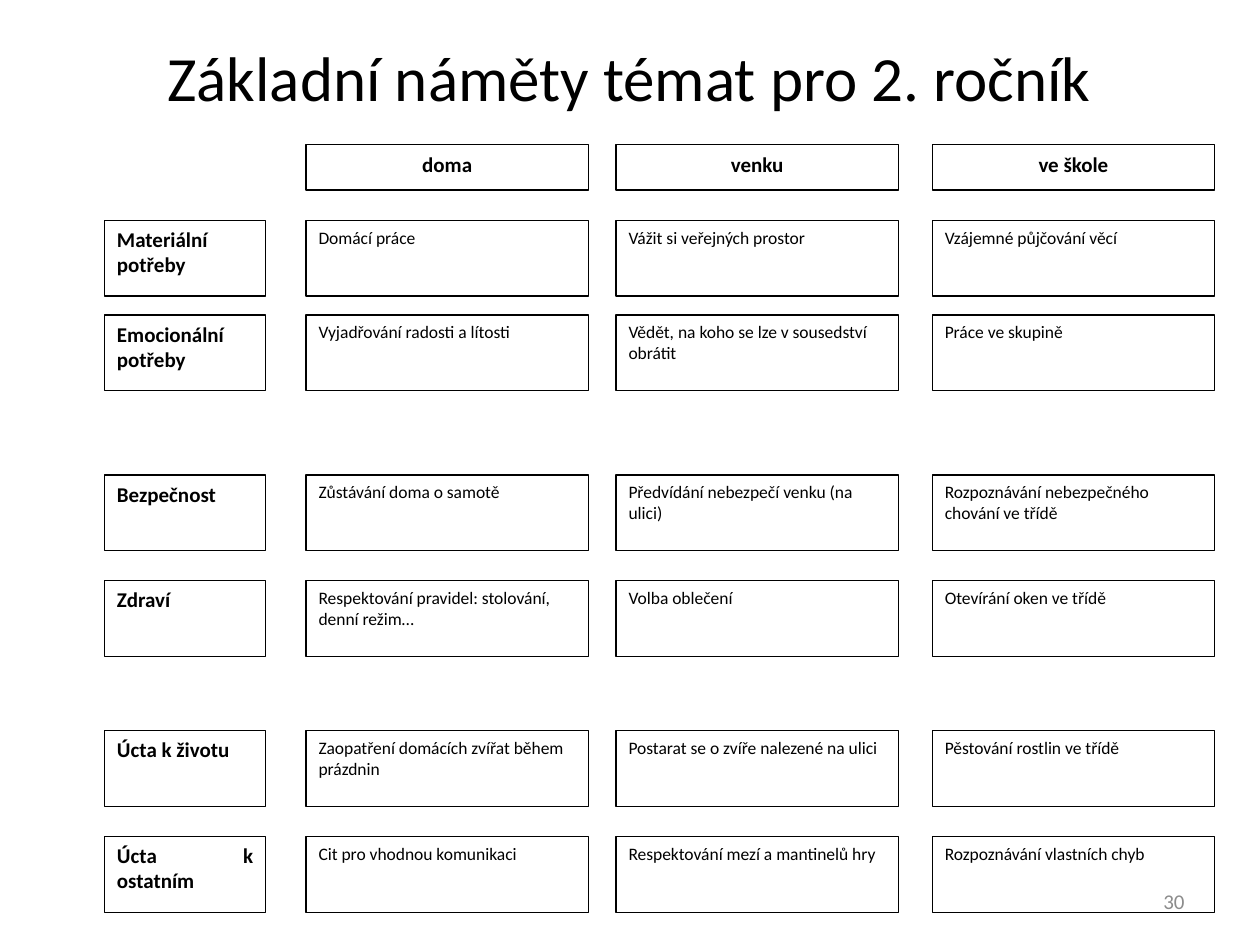
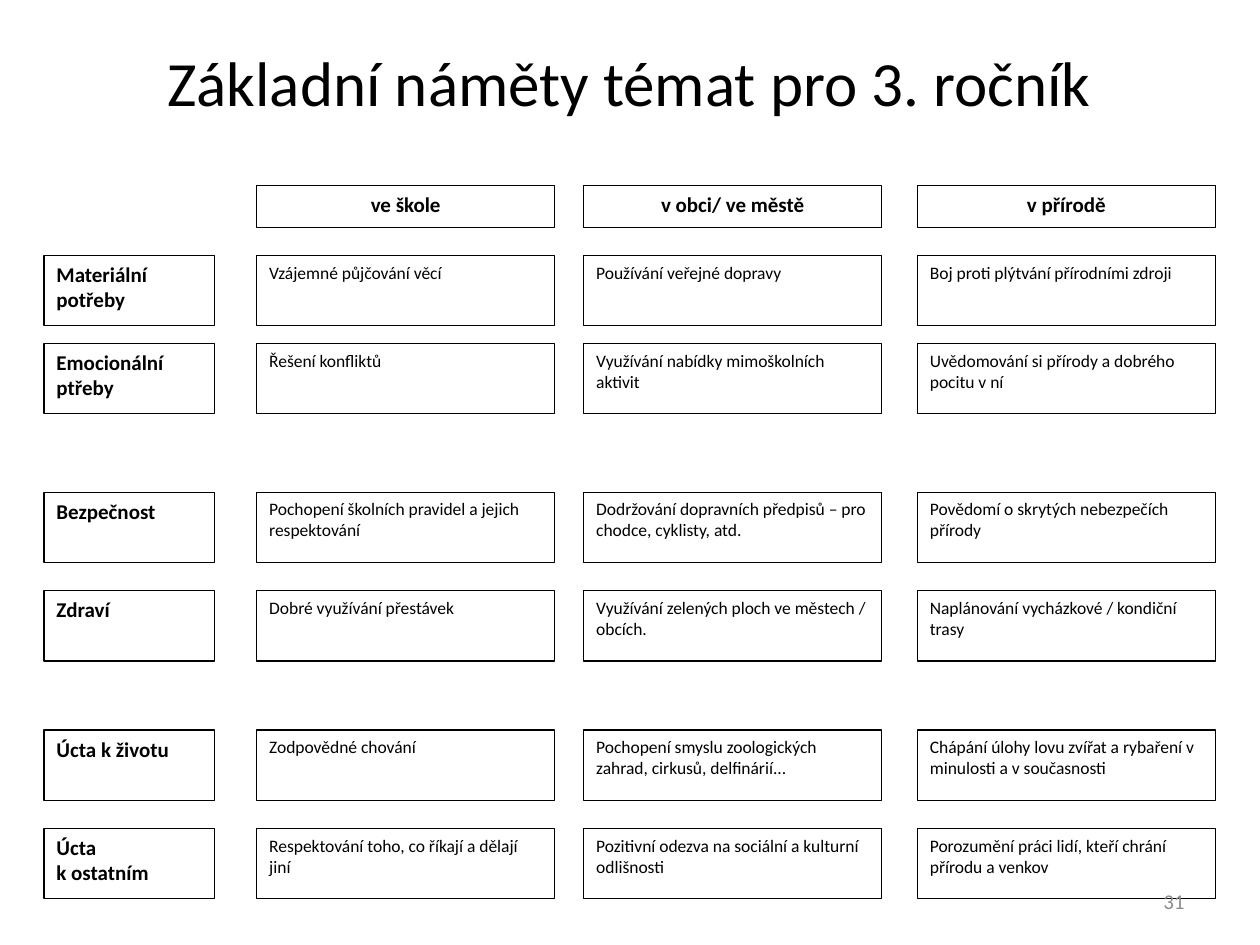
"""Builds two slides of topic grids for the 2nd and 3rd school year."""
from pptx import Presentation
from pptx.dml.color import RGBColor
from pptx.enum.shapes import MSO_SHAPE
from pptx.enum.text import MSO_ANCHOR, PP_ALIGN
from pptx.util import Inches, Pt

BLACK = "000000"
WHITE = "FFFFFF"
GREY = "8C8C8C"
FONT = "Calibri"

COLUMN_OFFSETS = [0, 1.6, 4.06, 6.57]
ROW_OFFSETS = [0, 0.6, 1.35, 2.62, 3.46, 4.65, 5.49]
LABEL_WIDTH, TOPIC_WIDTH = 1.28, 2.24
HEADER_HEIGHT, TOPIC_HEIGHT = 0.36, 0.6

PAGES = [
    {
        "title": "Základní náměty témat pro 2. ročník",
        "title_height": 0.61,
        "number": "30",
        "origin": (0.83, 1.15),
        "scale": (1, 1),
        "rows": [
            ["", "doma", "venku", "ve škole"],
            ["Materiální potřeby", "Domácí práce", "Vážit si veřejných prostor",
             "Vzájemné půjčování věcí"],
            ["Emocionální potřeby", "Vyjadřování radosti a lítosti",
             "Vědět, na koho se lze v sousedství obrátit", "Práce ve skupině"],
            ["Bezpečnost", "Zůstávání doma o samotě",
             "Předvídání nebezpečí venku (na ulici)",
             "Rozpoznávání nebezpečného chování ve třídě"],
            ["Zdraví", "Respektování pravidel: stolování, denní režim…",
             "Volba oblečení", "Otevírání oken ve třídě"],
            ["Úcta k životu", "Zaopatření domácích zvířat během prázdnin",
             "Postarat se o zvíře nalezené na ulici", "Pěstování rostlin ve třídě"],
            ["Úcta k ostatním", "Cit pro vhodnou komunikaci",
             "Respektování mezí a mantinelů hry", "Rozpoznávání vlastních chyb"],
        ],
    },
    {
        "title": "Základní náměty témat pro 3. ročník",
        "title_height": 0.69,
        "number": "31",
        "origin": (0.35, 1.47),
        "scale": (1.055, 0.93),
        "rows": [
            ["", "ve škole", "v obci/ ve městě", "v přírodě"],
            ["Materiální potřeby", "Vzájemné půjčování věcí",
             "Používání veřejné dopravy", "Boj proti plýtvání přírodními zdroji"],
            ["Emocionální ptřeby", "Řešení konfliktů",
             "Využívání nabídky mimoškolních aktivit",
             "Uvědomování si přírody a dobrého pocitu v ní"],
            ["Bezpečnost", "Pochopení školních pravidel a jejich respektování",
             "Dodržování dopravních předpisů – pro chodce, cyklisty, atd.",
             "Povědomí o skrytých nebezpečích přírody"],
            ["Zdraví", "Dobré využívání přestávek",
             "Využívání zelených ploch ve městech / obcích.",
             "Naplánování vycházkové / kondiční trasy"],
            ["Úcta k životu", "Zodpovědné chování",
             "Pochopení smyslu zoologických zahrad, cirkusů, delfinárií...",
             "Chápání úlohy lovu zvířat a rybaření v minulosti a v současnosti"],
            ["Úcta\nk ostatním", "Respektování toho, co říkají a dělají jiní",
             "Pozitivní odezva na sociální a kulturní odlišnosti",
             "Porozumění práci lidí, kteří chrání přírodu a venkov"],
        ],
    },
]


def color(value):
    return RGBColor.from_string(value)


def write(box, text, size, align, anchor=MSO_ANCHOR.TOP, bold=False, ink=BLACK):
    frame = box.text_frame
    frame.word_wrap = True
    frame.vertical_anchor = anchor
    frame.text = text
    for paragraph in frame.paragraphs:
        paragraph.alignment = align
        paragraph.font.name = FONT
        paragraph.font.size = Pt(size)
        paragraph.font.bold = bold
        paragraph.font.color.rgb = color(ink)


deck = Presentation()
deck.slide_width, deck.slide_height = Inches(10), Inches(7.5)

for content in PAGES:
    page = deck.slides.add_slide(deck.slide_layouts[6])
    title = page.shapes.add_textbox(
        Inches(0.27), Inches(0.3), Inches(9.45), Inches(content["title_height"]))
    write(title, content["title"], 36, PP_ALIGN.CENTER, MSO_ANCHOR.MIDDLE)

    left, top = content["origin"]
    scale_x, scale_y = content["scale"]
    for row, texts in enumerate(content["rows"]):
        for column, text in enumerate(texts):
            if not text:
                continue
            width = TOPIC_WIDTH if column else LABEL_WIDTH
            height = TOPIC_HEIGHT if row else HEADER_HEIGHT
            box = page.shapes.add_shape(
                MSO_SHAPE.RECTANGLE,
                Inches(left + COLUMN_OFFSETS[column] * scale_x),
                Inches(top + ROW_OFFSETS[row] * scale_y),
                Inches(width * scale_x), Inches(height * scale_y))
            box.shadow.inherit = False
            box.fill.solid()
            box.fill.fore_color.rgb = color(WHITE)
            box.line.color.rgb = color(BLACK)
            box.line.width = Pt(0.75)
            if row == 0:
                write(box, text, 12, PP_ALIGN.CENTER, bold=True)
            elif column == 0:
                write(box, text, 12, PP_ALIGN.JUSTIFY, bold=True)
            else:
                write(box, text, 10, PP_ALIGN.LEFT)

    number = page.shapes.add_textbox(
        Inches(7.17), Inches(6.95), Inches(2.33), Inches(0.4))
    write(number, content["number"], 12, PP_ALIGN.RIGHT, MSO_ANCHOR.MIDDLE, ink=GREY)

deck.save("out.pptx")
